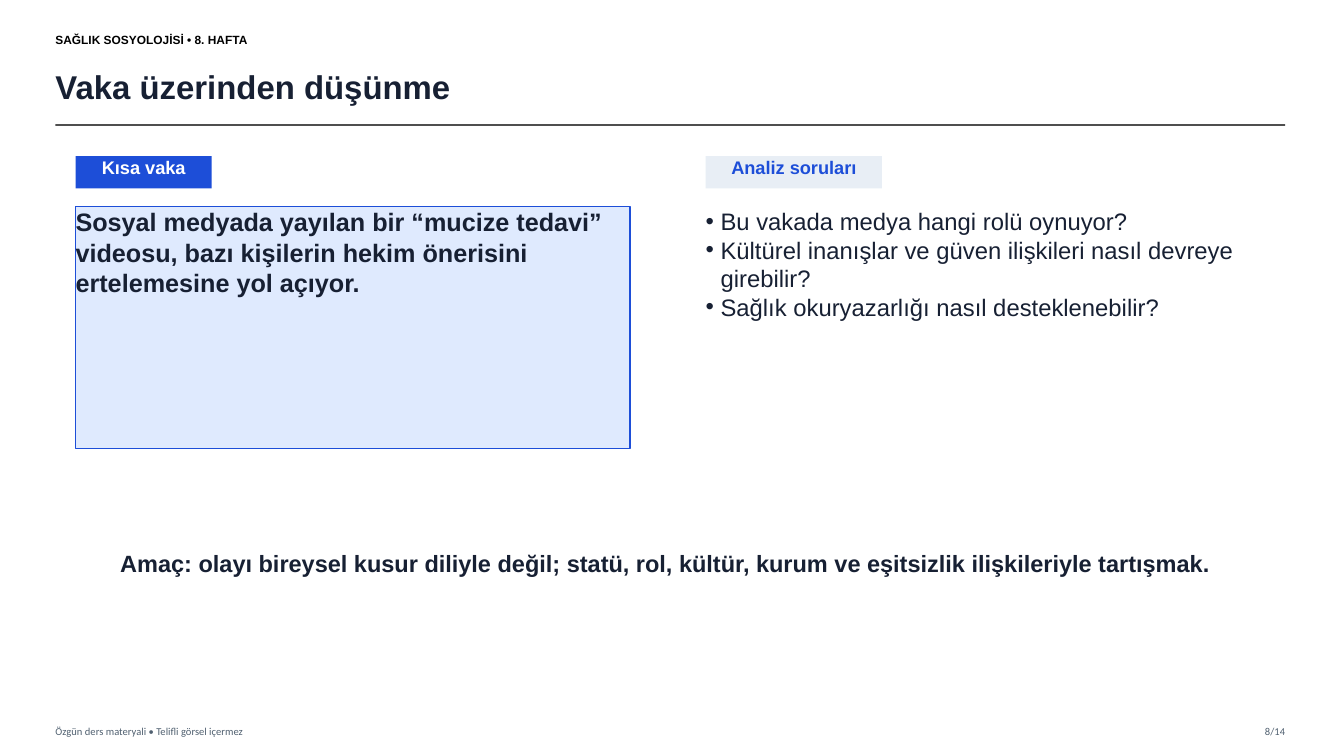
from lxml.etree import SubElement
from pptx import Presentation
from pptx.dml.color import RGBColor
from pptx.enum.shapes import MSO_CONNECTOR as Connector, MSO_SHAPE as Shape
from pptx.enum.text import MSO_ANCHOR as Anchor, MSO_AUTO_SIZE as AutoSize, PP_ALIGN as Align
from pptx.oxml.ns import qn
from pptx.util import Pt

INK, BLUE, PALE_BLUE, GREY_BLUE, SLATE = "172033", "1D4ED8", "DFEAFE", "E8EEF5", "506070"
LEFT, RIGHT = 39.6, 918  # page margins

KICKER = {"name": "Arial", "size": Pt(8.5), "bold": True}
TITLE = {"name": "Arial", "size": Pt(23.5), "bold": True}
LABEL = {"name": "Arial", "size": Pt(13), "bold": True}
CASE = {"name": "Arial", "size": Pt(18), "bold": True}
QUESTION = {"name": "Arial", "size": Pt(17), "bold": False}
AIM = {"name": "Arial", "size": Pt(16.8), "bold": True}
FOOTER = {"name": "Calibri", "size": Pt(7.5), "bold": False}


def color(hex_value):
    return RGBColor.from_string(hex_value)


def place(shape, box):
    for side, length in zip(("left", "top", "width", "height"), box):
        setattr(shape, side, Pt(length))


def write(shape, lines, font_format, ink, align=Align.LEFT, anchor=Anchor.TOP, hang=0):
    """Fill a shape with paragraphs; a hang above 0 gives them bullets."""
    frame = shape.text_frame
    frame_format = {"word_wrap": True, "auto_size": AutoSize.NONE, "vertical_anchor": anchor,
                    "margin_left": 0, "margin_top": 0, "margin_right": 0, "margin_bottom": 0}
    for key, value in frame_format.items():
        setattr(frame, key, value)
    for index, line in enumerate(lines):
        para = frame.paragraphs[0] if index == 0 else frame.add_paragraph()
        if hang:
            props = para._p.get_or_add_pPr()
            props.set("marL", str(Pt(hang)))
            props.set("indent", str(-Pt(hang)))
            SubElement(props, qn("a:buChar")).set("char", "•")
        for key, value in {"alignment": align, "space_before": Pt(0), "line_spacing": 1.0}.items():
            setattr(para, key, value)
        span = para.add_run()
        span.text = line
        for key, value in font_format.items():
            setattr(span.font, key, value)
        span.font.color.rgb = color(ink)


def add_text(page, box, text, font_format, ink, **layout):
    shape = page.shapes.add_textbox(*map(Pt, box))
    write(shape, [text], font_format, ink, **layout)


def add_panel(page, box, fill, text, font_format, ink, outline=None, **layout):
    panel = page.shapes.add_shape(Shape.RECTANGLE, *map(Pt, box))
    panel.shadow.inherit = False
    panel.fill.solid()
    panel.fill.fore_color.rgb = color(fill)
    if outline:
        panel.line.color.rgb = color(outline)
        panel.line.width = Pt(1)
    else:
        panel.line.fill.background()
    write(panel, [text], font_format, ink, **layout)


def add_header(page, left, top, width):
    add_text(page, (left, top, 259.2, 20.16), "SAĞLIK SOSYOLOJİSİ • 8. HAFTA",
             KICKER, "000000", anchor=Anchor.MIDDLE)
    title = page.shapes.title
    place(title, (left, top + 23.76, 860.4, 39.6))
    write(title, ["Vaka üzerinden düşünme"], TITLE, INK, anchor=Anchor.MIDDLE)
    # Rule under the title
    height = Pt(top + 71.28)
    rule = page.shapes.add_connector(Connector.STRAIGHT, Pt(left), height, Pt(left + width), height)
    rule.line.width = Pt(1.2)
    rule.line.color.rgb = color("333333")
    tint = rule.line._ln.find(".//" + qn("a:srgbClr"))
    SubElement(tint, qn("a:alpha")).set("val", "85000")
    SubElement(rule._element.spPr, qn("a:effectLst"))


def add_case(page, left, top):
    add_panel(page, (left, top, 97.2, 23.04), BLUE, "Kısa vaka", LABEL, "FFFFFF",
              align=Align.CENTER)
    add_panel(page, (left, top + 36, 396, 172.8), PALE_BLUE,
              "Sosyal medyada yayılan bir “mucize tedavi” videosu, bazı kişilerin "
              "hekim önerisini ertelemesine yol açıyor.", CASE, INK, outline=BLUE)


def add_questions(page, left, top):
    add_panel(page, (left, top, 126, 23.04), GREY_BLUE, "Analiz soruları", LABEL, BLUE,
              align=Align.CENTER)
    questions = page.placeholders[1]
    place(questions, (left, top + 36, 388.8, 190.8))
    write(questions, ["Bu vakada medya hangi rolü oynuyor?",
                      "Kültürel inanışlar ve güven ilişkileri nasıl devreye girebilir?",
                      "Sağlık okuryazarlığı nasıl desteklenebilir?"], QUESTION, INK, hang=10.7)


def add_footer(page, left, top, width):
    add_text(page, (left, top, 432, 15.84), "Özgün ders materyali • Telifli görsel içermez",
             FOOTER, SLATE, anchor=Anchor.MIDDLE)
    add_text(page, (left + width - 46.8, top, 46.8, 15.84), "8/14", FOOTER, SLATE,
             align=Align.RIGHT, anchor=Anchor.MIDDLE)


def main():
    deck = Presentation()
    deck.slide_width, deck.slide_height = Pt(960), Pt(540)
    page = deck.slides.add_slide(deck.slide_layouts[1])
    page.background.fill.solid()
    page.background.fill.fore_color.rgb = color("FFFFFF")

    add_header(page, LEFT, 18, RIGHT - LEFT)
    add_footer(page, LEFT, 514.08, RIGHT - LEFT)
    # Two columns: the case and the questions about it
    add_case(page, 54, 111.6)
    add_questions(page, 504, 111.6)
    # Aim of the discussion
    add_text(page, (75.6, 392.4, 799.2, 43.2),
             "Amaç: olayı bireysel kusur diliyle değil; statü, rol, kültür, kurum ve "
             "eşitsizlik ilişkileriyle tartışmak.", AIM, INK, align=Align.CENTER)
    deck.save("out.pptx")


if __name__ == "__main__":
    main()
